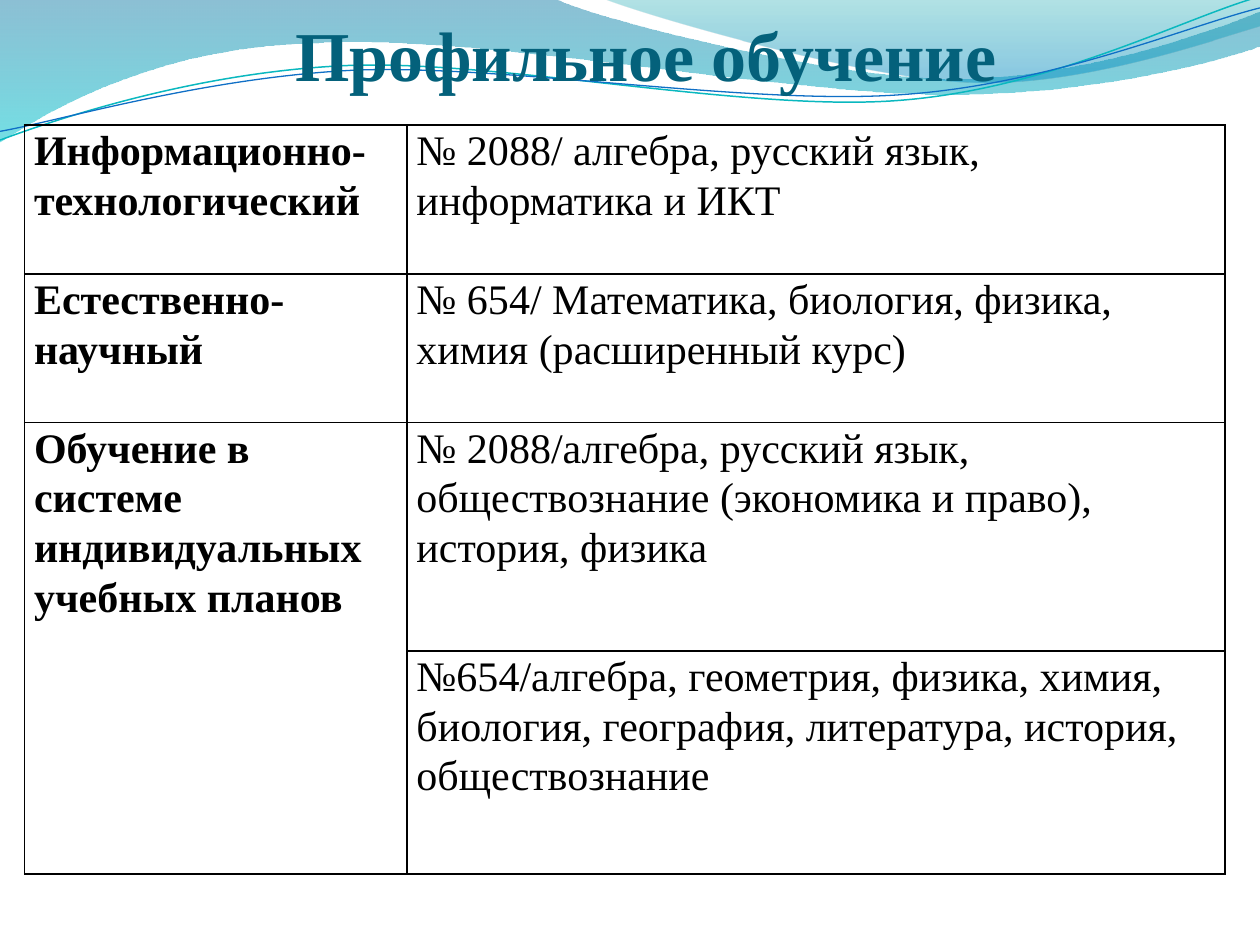
from lxml import etree
from pptx import Presentation
from pptx.dml.color import RGBColor
from pptx.enum.text import MSO_ANCHOR, MSO_AUTO_SIZE, PP_ALIGN
from pptx.oxml.ns import qn
from pptx.util import Pt

CENTER, LEFT = PP_ALIGN.CENTER, PP_ALIGN.LEFT
BOTTOM, TOP = MSO_ANCHOR.BOTTOM, MSO_ANCHOR.TOP
NO_AUTOFIT = MSO_AUTO_SIZE.NONE
BLACK = RGBColor(0x00, 0x00, 0x00)
TITLE_BLUE = RGBColor(0x04, 0x61, 0x7B)
DEEP_BLUE = RGBColor(0x00, 0x74, 0xA1)
AQUA = RGBColor(0x00, 0xC6, 0xCF)
TEAL = RGBColor(0x00, 0xA1, 0xA9)
SEA_BLUE = RGBColor(0x00, 0x8B, 0xBF)
LINE_TEAL = RGBColor(0x0A, 0xB8, 0xBF)
LINE_BLUE = RGBColor(0x0F, 0x6F, 0xC6)
FONT = "Times New Roman"
WAVE_ROTATION = 357.3

TITLE = "Профильное обучение"
PROFILES = [
    ("Информационно-технологический",
     ["№ 2088/ алгебра, русский язык, информатика и ИКТ"]),
    ("Естественно-научный",
     ["№ 654/ Математика, биология, физика, химия (расширенный курс)"]),
    ("Обучение в системе индивидуальных учебных планов",
     ["№ 2088/алгебра, русский язык, обществознание (экономика и право), "
      "история, физика"]),
    (None,
     ["№654/алгебра, геометрия, физика, химия,",
      "биология, география, литература, история, обществознание"]),
]
COLUMN_WIDTHS = [218.5, 467.5]
ROW_HEIGHTS = [85, 85, 130.5, 127.5]

# Each path is a start point and then segments in points:
# two numbers are a straight line, six are a cubic curve.
# Gradient stops are position, colour and opacity in percent.
BANDS = [
    {"start": (0, 0),
     "segments": [(317, -0.7), (343, 12, 478, 45, 546, 45),
                  (614, 45, 690, 19, 720, 6.5), (720.7, 26),
                  (708, 32, 626, 55, 537, 54), (448, 54, 275, 20, 185, 24.5),
                  (93, 26, 33, 60, -0.7, 81.4)],
     "stops": [(0, DEEP_BLUE, 45), (1, AQUA, 55)]},
    {"start": (345, -0.7),
     "segments": [(366, 8, 491, 45, 554, 47), (616, 50, 692, 23, 720, 15),
                  (720, 0)],
     "stops": [(0, TEAL, 30), (0.8, SEA_BLUE, 45)]},
]
# Waves are given level and then turned by WAVE_ROTATION.
WAVES = [
    {"start": (-1.4, 63.1),
     "segments": [(34.2, 51.7, 114.3, 29.4, 199.4, 29.9),
                  (284.4, 30.5, 425.8, 67.2, 512, 64.7),
                  (599.2, 62.3, 676.1, 25.9, 720.1, 15.4)],
     "color": LINE_TEAL, "width": 0.85},
    {"start": (-1.1, 58.1),
     "segments": [(33.2, 53.7, 118.2, 32.6, 204.3, 32.7),
                  (290.4, 33.7, 429.1, 63.8, 515.3, 61.4),
                  (601.4, 59.4, 678.9, 30, 721.4, 21.5)],
     "color": LINE_BLUE, "width": 0.75},
]


def add_outline(slide, start, segments, close):
    """Draw all path points as lines, then join each curve's three into one cubic."""
    points = [(Pt(x), Pt(y)) for segment in segments
              for x, y in zip(segment[::2], segment[1::2])]
    builder = slide.shapes.build_freeform(Pt(start[0]), Pt(start[1]))
    builder.add_line_segments(points, close=close)
    shape = builder.convert_to_shape()
    shape.shadow.inherit = False
    lines = iter(list(shape.element.spPr.iter(qn("a:lnTo"))))
    for segment in segments:
        line = next(lines)
        if len(segment) == 6:
            line_group = [line, next(lines), next(lines)]
            curve = etree.Element(qn("a:cubicBezTo"))
            line.addprevious(curve)
            for part in line_group:
                curve.append(part[0])
                part.getparent().remove(part)
    return shape


def add_band(slide, start, segments, stops):
    shape = add_outline(slide, start, segments, close=True)
    shape.line.fill.background()
    shape.fill.gradient()
    shape.fill.gradient_angle = 270
    for stop, (position, color, _) in zip(shape.fill.gradient_stops, stops):
        stop.position = position
        stop.color.rgb = color
    colors = shape.element.spPr.iter(qn("a:srgbClr"))
    for color, (_, _, opacity) in zip(colors, stops):
        etree.SubElement(color, qn("a:alpha"), val=str(opacity * 1000))


def add_wave(slide, start, segments, color, width):
    shape = add_outline(slide, start, segments, close=False)
    shape.rotation = WAVE_ROTATION
    shape.fill.background()
    shape.line.color.rgb = color
    shape.line.width = Pt(width)


def write_text(text_frame, paragraphs, size=24, bold=False, color=BLACK,
               align=LEFT, spacing=1.07):
    for index, text in enumerate(paragraphs):
        paragraph = text_frame.add_paragraph() if index else text_frame.paragraphs[0]
        paragraph.alignment = align
        paragraph.line_spacing = spacing
        paragraph.space_before = paragraph.space_after = Pt(0)
        run = paragraph.add_run()
        run.text = text
        run.font.name = FONT
        run.font.size = Pt(size)
        run.font.bold = bold
        run.font.color.rgb = color


def format_cell(cell):
    cell.fill.background()
    cell.margin_left = cell.margin_right = Pt(5.4)
    cell.margin_top = cell.margin_bottom = 0
    cell.vertical_anchor = TOP
    properties = cell._tc.get_or_add_tcPr()
    for index, side in enumerate(("a:lnL", "a:lnR", "a:lnT", "a:lnB")):
        border = etree.Element(qn(side), w=str(Pt(1)))
        fill = etree.SubElement(border, qn("a:solidFill"))
        etree.SubElement(fill, qn("a:srgbClr"), val=str(BLACK))
        properties.insert(index, border)


def add_profile_table(slide):
    frame = slide.shapes.add_table(
        len(PROFILES), len(COLUMN_WIDTHS), Pt(14.1), Pt(71.5),
        Pt(sum(COLUMN_WIDTHS)), Pt(sum(ROW_HEIGHTS)))
    table = frame.table
    table.first_row = table.horz_banding = False
    for column, width in zip(table.columns, COLUMN_WIDTHS):
        column.width = Pt(width)
    for row, height in zip(table.rows, ROW_HEIGHTS):
        row.height = Pt(height)
    for index, (profile, subjects) in enumerate(PROFILES):
        name_cell, subject_cell = table.cell(index, 0), table.cell(index, 1)
        format_cell(name_cell)
        format_cell(subject_cell)
        if profile:
            write_text(name_cell.text_frame, [profile], bold=True)
        else:
            table.cell(index - 1, 0).merge(name_cell)
        write_text(subject_cell.text_frame, subjects)


def place_title(slide):
    title = slide.shapes.title
    title.left, title.top, title.width, title.height = map(Pt, (54, 15, 630, 39.6))
    frame = title.text_frame
    frame.word_wrap = True
    frame.auto_size = NO_AUTOFIT
    frame.vertical_anchor = BOTTOM
    frame.margin_left = frame.margin_right = frame.margin_bottom = 0
    frame.margin_top = Pt(3.6)
    write_text(frame, [TITLE], size=40, bold=True, color=TITLE_BLUE,
               align=CENTER, spacing=1.0)
    slide.shapes.element.append(title.element)  # in front of the waves


def main():
    presentation = Presentation()
    presentation.slide_width, presentation.slide_height = Pt(720), Pt(540)
    slide = presentation.slides.add_slide(presentation.slide_layouts[5])
    for band in BANDS:
        add_band(slide, **band)
    for wave in WAVES:
        add_wave(slide, **wave)
    add_profile_table(slide)
    place_title(slide)
    presentation.save("out.pptx")


if __name__ == "__main__":
    main()
